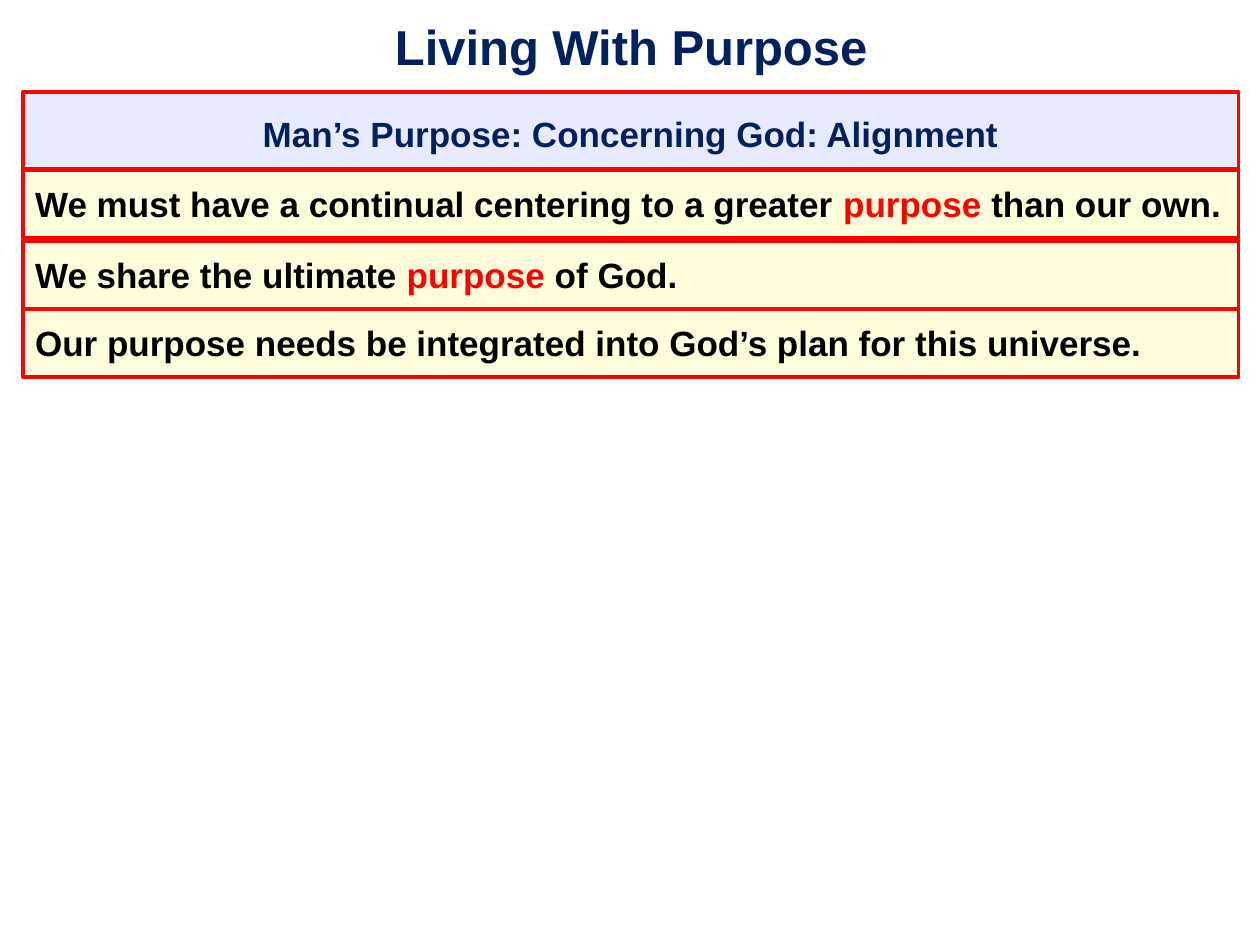
from lxml.etree import SubElement
from pptx import Presentation
from pptx.dml.color import RGBColor
from pptx.enum.shapes import MSO_SHAPE
from pptx.enum.text import MSO_ANCHOR, PP_ALIGN
from pptx.oxml.ns import qn
from pptx.util import Inches, Pt

NAVY, RED, BLACK = "002060", "FF0000", "000000"
LILAC, CREAM = "D0D6FF", "FFFDB8"
LEFT, WIDTH = 0.18, 9.65
HEADING_TOP, HEADING_HEIGHT = 0.73, 0.61
ROW_TOPS, ROW_HEIGHT = (1.35, 1.91, 2.45), 0.54
POINTS = (
    [("We must have a continual centering to a greater ", BLACK),
     ("purpose", RED), (" than our own.", BLACK)],
    [("We share the ultimate ", BLACK), ("purpose", RED), (" of God.", BLACK)],
    [("Our purpose needs be integrated into God’s plan for this universe.", BLACK)],
)


def rgb(value):
    return RGBColor.from_string(value)


def write(sp, runs, size=20, align=PP_ALIGN.LEFT, anchor=MSO_ANCHOR.TOP,
          spacing=1.0, insets=(0.1, 0.1, 0.1, 0.1)):
    """Fill a shape with one paragraph of (text, colour) runs; insets run left, top, right, bottom."""
    tf = sp.text_frame
    tf.word_wrap = True
    tf.vertical_anchor = anchor
    tf.margin_left, tf.margin_top, tf.margin_right, tf.margin_bottom = map(Inches, insets)
    p = tf.paragraphs[0]
    p.alignment = align
    p.line_spacing = spacing
    for text, color in runs:
        r = p.add_run()
        r.text = text
        r.font.name = "Arial"
        r.font.size = Pt(size)
        r.font.bold = True
        r.font.color.rgb = rgb(color)


def add_title(s, text):
    sp = s.shapes.add_textbox(Inches(0.14), Inches(0.02), Inches(9.78), Inches(0.69))
    write(sp, [(text, NAVY)], size=28, align=PP_ALIGN.CENTER,
          anchor=MSO_ANCHOR.MIDDLE, insets=(0.1, 0.06, 0.14, 0.06))


def add_bar(s, top, height, fill, runs, **fmt):
    """Add a full-width, half-transparent bar with a red outline."""
    sp = s.shapes.add_shape(MSO_SHAPE.RECTANGLE, Inches(LEFT), Inches(top),
                            Inches(WIDTH), Inches(height))
    sp.shadow.inherit = False
    sp.fill.solid()
    sp.fill.fore_color.rgb = rgb(fill)
    color = sp.element.spPr.find(qn("a:solidFill")).find(qn("a:srgbClr"))
    SubElement(color, qn("a:alpha"), val="50000")
    sp.line.color.rgb = rgb(RED)
    sp.line.width = Pt(2.25)
    write(sp, runs, **fmt)


def main():
    prs = Presentation()
    prs.slide_width, prs.slide_height = Inches(10), Inches(7.5)
    s = prs.slides.add_slide(prs.slide_layouts[6])
    add_title(s, "Living With Purpose")
    add_bar(s, HEADING_TOP, HEADING_HEIGHT, LILAC,
            [("Man’s Purpose: Concerning God: Alignment", NAVY)],
            align=PP_ALIGN.CENTER, spacing=1.2)
    for top, runs in zip(ROW_TOPS, POINTS):
        add_bar(s, top, ROW_HEIGHT, CREAM, runs)
    prs.save("out.pptx")


if __name__ == "__main__":
    main()
